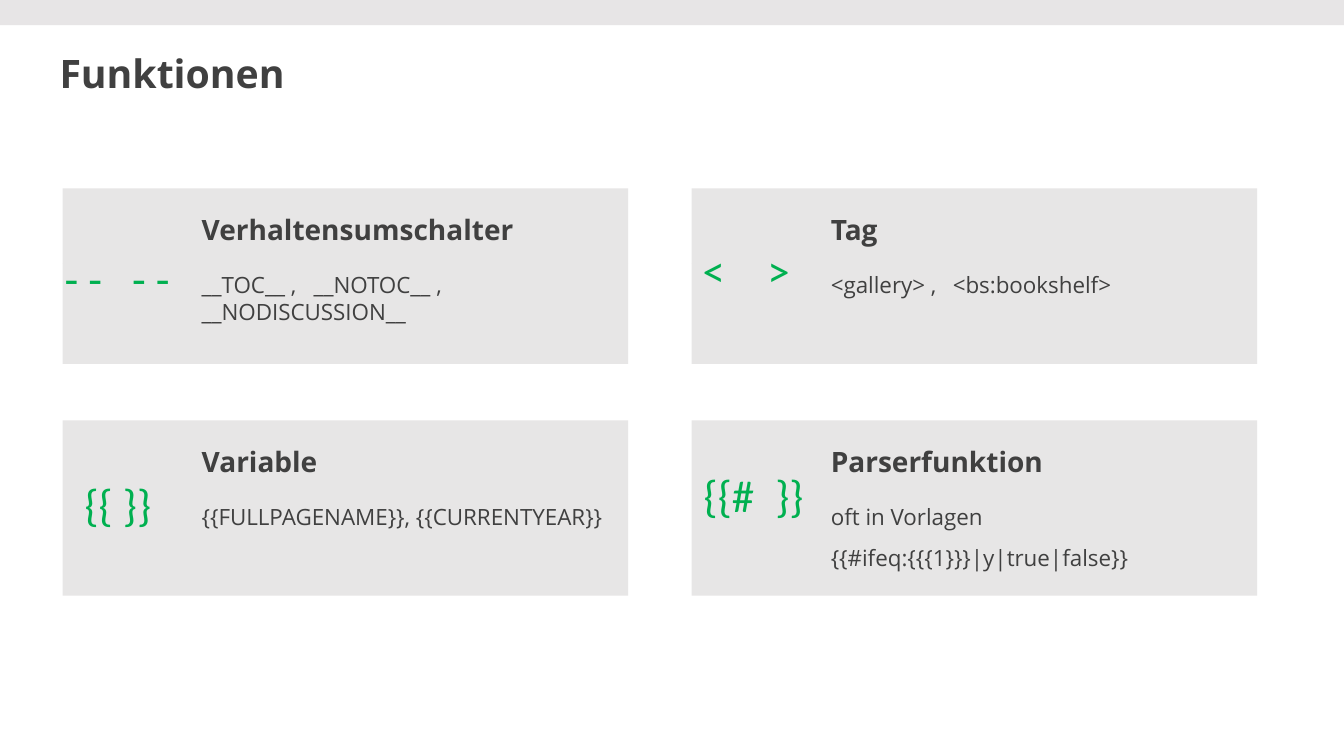
from lxml import etree
from pptx import Presentation
from pptx.dml.color import RGBColor
from pptx.enum.shapes import MSO_SHAPE
from pptx.enum.text import MSO_ANCHOR, PP_ALIGN
from pptx.oxml.ns import qn
from pptx.util import Inches, Pt

RECTANGLE = MSO_SHAPE.RECTANGLE
TOP, MIDDLE = MSO_ANCHOR.TOP, MSO_ANCHOR.MIDDLE
LEFT = PP_ALIGN.LEFT

TITLE = {"name": "Open Sans", "size": Pt(28), "bold": True}
HEADING = {"name": "Open Sans", "size": Pt(20), "bold": True}
BODY = {"name": "Open Sans", "size": Pt(16), "bold": False}
SYMBOL = {"name": "Calibri", "size": Pt(32), "bold": False}
DARK, GREEN, PANEL, BAND = "404040", "00B050", "E7E6E6", "E7E5E6"

COLUMNS, ROWS = (0.62, 6.86), (1.87, 4.17)
CARD_WIDTH, HEADING_HEIGHT, BODY_HEIGHT = 5.61, 0.74, 1
SYMBOL_WIDTH, SYMBOL_OFFSET = 2.2, -0.48

# Symbol geometry: top, height, left inset, bottom inset, tab stop
CARDS = [
    ("Verhaltensumschalter", ["__TOC__ ,\t__NOTOC__ , __NODISCUSSION__"], 1.11,
     "- -\t- -", (2.56, 0.74, 0.5, 0.34, 0.67)),
    ("Tag", ["<gallery> ,\t<bs:bookshelf>"], 1.21,
     "<\t>", (2.42, 0.87, 0.59, 0.34, 0.64)),
    ("Variable", ["{{FULLPAGENAME}}, {{CURRENTYEAR}}"], None,
     "{{ }}", (4.46, 1.14, 0.7, 0.05, None)),
    ("Parserfunktion", ["oft in Vorlagen", "{{#ifeq:{{{1}}}|y|true|false}}"], None,
     "{{#\t}}", (4.59, 1, 0.6, 0.34, 0.71)),
]


def color(value):
    return RGBColor.from_string(value)


class SlideBuilder:
    def __init__(self, presentation):
        self.slide = presentation.slides.add_slide(presentation.slide_layouts[5])

    def fill_text(self, shape, lines, style, text_color, insets, anchor=TOP, spacing=1.0, tab=None):
        """Fill a shape with paragraphs; insets run left, top, right, bottom."""
        frame = shape.text_frame
        frame.word_wrap = True
        frame.vertical_anchor = anchor
        for side, inset in zip(("left", "top", "right", "bottom"), insets):
            setattr(frame, f"margin_{side}", Inches(inset))
        for index, line in enumerate(lines):
            paragraph = frame.add_paragraph() if index else frame.paragraphs[0]
            if tab:
                self.add_tab(paragraph, tab)
            paragraph.alignment = LEFT
            paragraph.line_spacing = spacing
            paragraph.space_before = Pt(10 if index else 0)
            run = paragraph.add_run()
            run.text = line
            for name, value in style.items():
                setattr(run.font, name, value)
            run.font.color.rgb = color(text_color)

    def add_tab(self, paragraph, position):
        properties = paragraph._p.get_or_add_pPr()
        tabs = etree.SubElement(properties, qn("a:tabLst"))
        etree.SubElement(tabs, qn("a:tab"), pos=str(Inches(position)), algn="l")

    def title(self, text, left, top, width, height):
        shape = self.slide.shapes.title
        shape.left, shape.top = Inches(left), Inches(top)
        shape.width, shape.height = Inches(width), Inches(height)
        self.fill_text(shape, [text], TITLE, DARK, (0.1, 0.05, 0.1, 0.05), MIDDLE, 0.9)

    def panel(self, left, top, width, height, fill):
        shape = self.slide.shapes.add_shape(
            RECTANGLE, Inches(left), Inches(top), Inches(width), Inches(height))
        shape.shadow.inherit = False
        shape.fill.solid()
        shape.fill.fore_color.rgb = color(fill)
        shape.line.fill.background()
        return shape

    def symbol(self, text, left, geometry):
        top, height, inset, bottom, tab = geometry
        box = self.slide.shapes.add_textbox(
            Inches(left), Inches(top), Inches(SYMBOL_WIDTH), Inches(height))
        self.fill_text(box, [text], SYMBOL, GREEN, (inset, 0.05, 0.1, bottom), MIDDLE, 0.9, tab)

    def card(self, left, top, heading, lines, body_tab, symbol, geometry):
        header = self.panel(left, top, CARD_WIDTH, HEADING_HEIGHT, PANEL)
        self.fill_text(header, [heading], HEADING, DARK, (1.38, 0.24, 0.1, 0.16))
        body = self.panel(left, top + HEADING_HEIGHT, CARD_WIDTH, BODY_HEIGHT, PANEL)
        self.fill_text(body, lines, BODY, DARK, (1.38, 0.08, 0.16, 0.08), tab=body_tab)
        self.symbol(symbol, left + SYMBOL_OFFSET, geometry)


def main():
    presentation = Presentation()
    presentation.slide_width, presentation.slide_height = Inches(13.33), Inches(7.5)
    builder = SlideBuilder(presentation)
    builder.panel(0, 0, 13.33, 0.25, BAND)
    builder.title("Funktionen", 0.49, 0.5, 10.62, 0.51)
    for index, card in enumerate(CARDS):
        row, column = divmod(index, len(COLUMNS))
        builder.card(COLUMNS[column], ROWS[row], *card)
    presentation.save("out.pptx")


if __name__ == "__main__":
    main()
